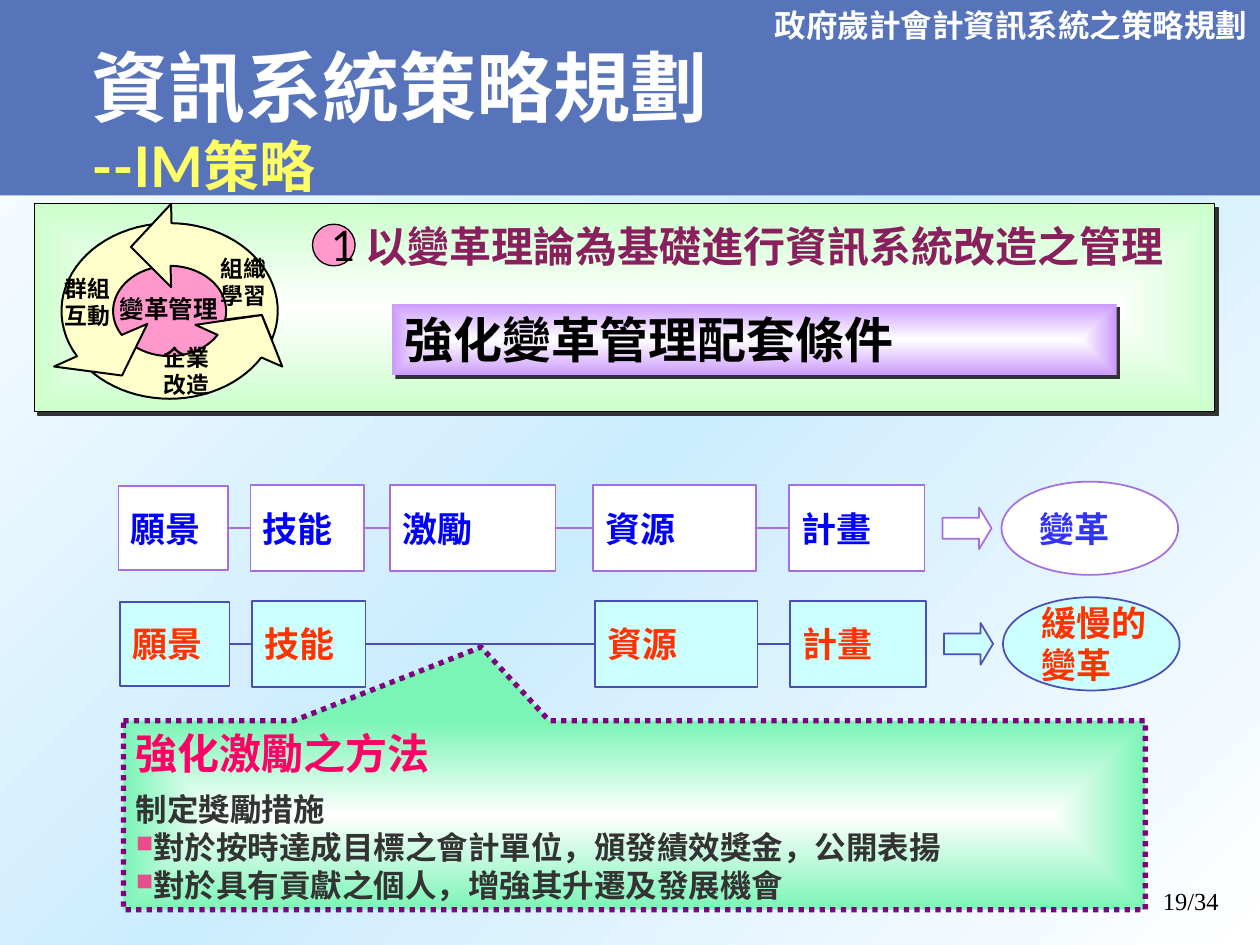
from math import cos, radians, sin

from pptx import Presentation
from pptx.dml.color import RGBColor
from pptx.enum.dml import MSO_LINE
from pptx.enum.shapes import MSO_CONNECTOR, MSO_SHAPE
from pptx.enum.text import MSO_ANCHOR, PP_ALIGN
from pptx.oxml import parse_xml
from pptx.oxml.ns import nsdecls, qn
from pptx.util import Cm, Pt

RECT, OVAL, ARROW = MSO_SHAPE.RECTANGLE, MSO_SHAPE.OVAL, MSO_SHAPE.RIGHT_ARROW
CALLOUT = MSO_SHAPE.RECTANGULAR_CALLOUT
STRAIGHT = MSO_CONNECTOR.STRAIGHT
DOTS = MSO_LINE.ROUND_DOT
TOP, MIDDLE = MSO_ANCHOR.TOP, MSO_ANCHOR.MIDDLE
LEFT, RIGHT = PP_ALIGN.LEFT, PP_ALIGN.RIGHT

WHITE = RGBColor(0xFF, 0xFF, 0xFF)
BLACK = RGBColor(0, 0, 0)
GREY = RGBColor(0x33, 0x33, 0x33)
STEEL = RGBColor(0x57, 0x74, 0xBB)
YELLOW = RGBColor(0xFF, 0xFF, 0x66)
CREAM = RGBColor(0xFF, 0xFF, 0xCC)
PINK = RGBColor(0xFF, 0x99, 0xCC)
ROSE = RGBColor(0xFF, 0x00, 0x66)
PLUM = RGBColor(0x89, 0x1F, 0x5C)
PURPLE = RGBColor(0x80, 0x00, 0x80)
LILAC = RGBColor(0xA5, 0x6F, 0xE1)
VIOLET = RGBColor(0xCC, 0x99, 0xFF)
BLUE = RGBColor(0x00, 0x00, 0xFF)
INDIGO = RGBColor(0x33, 0x33, 0xFF)
NAVY = RGBColor(0x4B, 0x4E, 0xB5)
AQUA = RGBColor(0xCC, 0xFF, 0xFF)
SKY = RGBColor(0xCC, 0xEC, 0xFF)
RED = RGBColor(0xFF, 0x33, 0x00)
MINT = RGBColor(0xCC, 0xFF, 0xCC)
GREEN = RGBColor(0x7B, 0xF5, 0xB5)
BULLET = RGBColor(0xE6, 0x4E, 0x8C)

SANS, SERIF = "Lato", "Times New Roman"
HAN, LABEL = "Noto Sans CJK SC", "Noto Sans CJK TC"

deck = Presentation()
deck.slide_width, deck.slide_height = Cm(25.4), Cm(19.05)
slide = deck.slides.add_slide(deck.slide_layouts[6])
shapes = slide.shapes


def write(frame, text, font=SANS, size=18, color=BLACK, bold=True, align=LEFT,
          anchor=TOP, wrap=False, inset=(0.25, 0.13), after=0, bullet=False):
    """Add each line of text as a paragraph, filling the empty first one."""
    frame.word_wrap, frame.vertical_anchor = wrap, anchor
    frame.margin_left = frame.margin_right = Cm(inset[0])
    frame.margin_top, frame.margin_bottom = Cm(inset[1]), Cm(min(inset[1], 0.13))
    for line in text.split("\n"):
        para = frame.paragraphs[-1]
        if para.runs:
            para = frame.add_paragraph()
        para.alignment = align
        para.line_spacing, para.space_after = Pt(size * 1.2), Pt(after)
        run = para.add_run()
        run.text = line
        run.font.name, run.font.size, run.font.bold = font, Pt(size), bold
        run.font.color.rgb = color
        run.font.fill._xPr.append(parse_xml(f'<a:ea {nsdecls("a")} typeface="{LABEL}"/>'))
        if bullet:
            props = para._p.get_or_add_pPr()
            props.set("marL", "0")
            props.set("indent", "0")
            for tag in (f'buClr {nsdecls("a")}><a:srgbClr val="{BULLET}"/></a:buClr',
                        f'buSzPct {nsdecls("a")} val="75000"/',
                        f'buChar {nsdecls("a")} char="■"/'):
                props.append(parse_xml(f"<a:{tag}>"))


def draw(kind, box, fill, line=None, width=1):
    shape = shapes.add_shape(kind, *map(Cm, box))
    shape.shadow.inherit = False
    shape.fill.solid()
    shape.fill.fore_color.rgb = fill
    if line is None:
        shape.line.fill.background()
    else:
        shape.line.color.rgb, shape.line.width = line, Pt(width)
    return shape


# Header
draw(RECT, (0, 0, 25.4, 3.94), STEEL)
box = shapes.add_textbox(Cm(15.37), 0, Cm(10.03), Cm(1.02))
write(box.text_frame, "政府歲計會計資訊系統之策略規劃", color=WHITE)
title = shapes.add_textbox(Cm(1.7), Cm(0.71), Cm(23.22), Cm(3.18)).text_frame
write(title, "資訊系統策略規劃", size=44, color=WHITE)
write(title, "--IM策略", size=32, color=YELLOW, wrap=True, inset=(0.15, 0.08))
box = shapes.add_textbox(Cm(18.9), Cm(17.73), Cm(5.92), Cm(1.32))
write(box.text_frame, "19/34", font=SERIF, size=14, bold=False, align=RIGHT, wrap=True)

# Two chains of conditions; the second lacks the incentive
STEPS = [("願景", 2.39, 2.21, 1.69), ("技能", 5.05, 2.29, 1.73), ("激勵", 7.87, 3.33, 1.73),
         ("資源", 11.96, 3.28, 1.73), ("計畫", 15.9, 2.74, 1.73)]
CHAINS = [(0, 10.65, WHITE, LILAC, BLUE, INDIGO, "變革", None),
          (0.03, 12.98, AQUA, NAVY, RED, RED, "緩慢的\n變革", "激勵")]
for shift, mid, fill, edge, ink, end, result, gap in CHAINS:
    last = None
    for name, left, width, high in STEPS:
        if name == gap:
            continue
        step = draw(RECT, (left + shift, mid - high / 2, width, high), fill, edge)
        write(step.text_frame, name, font=HAN, size=20, color=ink, anchor=MIDDLE)
        if last:
            link = shapes.add_connector(STRAIGHT, 0, 0, 0, 0)
            link.begin_connect(last, 3)
            link.end_connect(step, 1)
            link.line.color.rgb, link.line.width = edge, Pt(1)
            link._element.spPr.append(parse_xml(f'<a:effectLst {nsdecls("a")}/>'))
        last = step
    arrow = draw(ARROW, (19 + shift, mid - 0.42, 0.99, 0.84), fill, edge)
    arrow.adjustments[1] = 0.3
    oval = draw(OVAL, (20.19 + shift, mid - 0.94, 3.56, 1.88), fill, edge)
    write(oval.text_frame, result, font=HAN, size=20, color=end, anchor=MIDDLE)

# Callout on the missing incentive
callout = draw(CALLOUT, (2.49, 14.53, 20.6, 3.81), GREEN, PURPLE, 3)
callout.adjustments[0], callout.adjustments[1] = -0.15, -0.89
callout.line.dash_style = DOTS
note = callout.text_frame
write(note, "強化激勵之方法", size=24, color=ROSE, after=7.2)
write(note, "制定獎勵措施", font=HAN, color=GREY)
write(note, "對於按時達成目標之會計單位，頒發績效獎金，公開表揚\n對於具有貢獻之個人，增強其升遷及發展機會",
      font=HAN, color=GREY, anchor=MIDDLE, wrap=True, bullet=True)

# Panel with the wheel of change
panel = draw(RECT, (0.69, 4.11, 23.8, 4.19), MINT, BLACK, 0.75)
hub = draw(RECT, (2.21, 5.33, 2.74, 2.08), PINK)
write(hub.text_frame, "變革管理", font=LABEL, size=14, inset=(0.2, 0.6))

# Each blade: outer arc, tips, inner arc, closing tips
OUTER, INNER = (2.18, 1.77), (1.14, 0.91)
BLADES = [((139, 32), [(5.69, 7.39), (5.28, 6.35), (3.94, 6.55)], (32, 129), []),
          ((262, 149), [(1.09, 7.39), (2.46, 7.57), (2.97, 6.53)], (148, 253), []),
          ((271, 379), [(5.28, 6.35)], (371, 271),
           [(3.45, 5.79), (2.64, 4.98), (3.45, 4.11)])]
for outer, tips, inner, close in BLADES:
    arcs = []
    for (start, stop), (wide, high) in ((outer, OUTER), (inner, INNER)):
        turns = [radians(start + (stop - start) * i / 24) for i in range(25)]
        arcs.append([(3.42 + wide * cos(t), 6.27 + high * sin(t)) for t in turns])
    points = [(Cm(x), Cm(y)) for x, y in arcs[0] + tips + arcs[1] + close]
    path = shapes.build_freeform(*points[0])
    path.add_line_segments(points[1:])
    blade = path.convert_to_shape()
    blade.shadow.inherit = False
    blade.fill.solid()
    blade.fill.fore_color.rgb = CREAM
    blade.line.color.rgb, blade.line.width = BLACK, Pt(1.13)
for text, left, top in (("組織\n學習", 4.45, 5.13), ("群組\n互動", 1.3, 5.54),
                        ("企業\n改造", 3.3, 6.93)):
    box = shapes.add_textbox(Cm(left), Cm(top), Cm(0.95), Cm(1.09))
    write(box.text_frame, text, font=LABEL, size=13, inset=(0, 0))

# Panel heading and banner
disc = draw(OVAL, (6.3, 4.52, 0.86, 0.84), PINK, BLACK, 0.75)
write(disc.text_frame, "1", size=24, bold=False, anchor=MIDDLE)
box = shapes.add_textbox(Cm(7.11), Cm(4.32), Cm(16.59), Cm(1.27))
write(box.text_frame, "以變革理論為基礎進行資訊系統改造之管理", size=24, color=PLUM)
banner = draw(RECT, (7.9, 6.12, 14.61, 1.45), VIOLET)
write(banner.text_frame, "強化變革管理配套條件", font=SERIF, size=28)

# Gradients and hard shadows
CENTRE = '<a:path path="rect"><a:fillToRect l="50000" t="50000" r="50000" b="50000"/></a:path>'
SLOPE = '<a:lin ang="2700000" scaled="0"/>'
for owner, root, colors, way in (
        (slide.background, slide.element, (WHITE, SKY, WHITE), SLOPE),
        (callout, callout._element, (WHITE, GREEN), CENTRE),
        (panel, panel._element, (WHITE, MINT), CENTRE),
        (banner, banner._element, (WHITE, VIOLET), CENTRE)):
    owner.fill.gradient()
    old = next(root.iter(qn("a:gradFill")))
    stops = "".join(f'<a:gs pos="{100000 * i // (len(colors) - 1)}"><a:srgbClr val="{c}"/></a:gs>'
                    for i, c in enumerate(colors))
    old.getparent().replace(old, parse_xml(
        f'<a:gradFill {nsdecls("a")} rotWithShape="1"><a:gsLst>{stops}</a:gsLst>{way}</a:gradFill>'))
for shape in (panel, banner):
    shape._element.spPr.find(qn("a:effectLst")).append(parse_xml(
        f'<a:outerShdw {nsdecls("a")} dist="35560" dir="2700000" algn="ctr" rotWithShape="0">'
        f'<a:srgbClr val="{GREY}"/></a:outerShdw>'))

deck.save("out.pptx")
